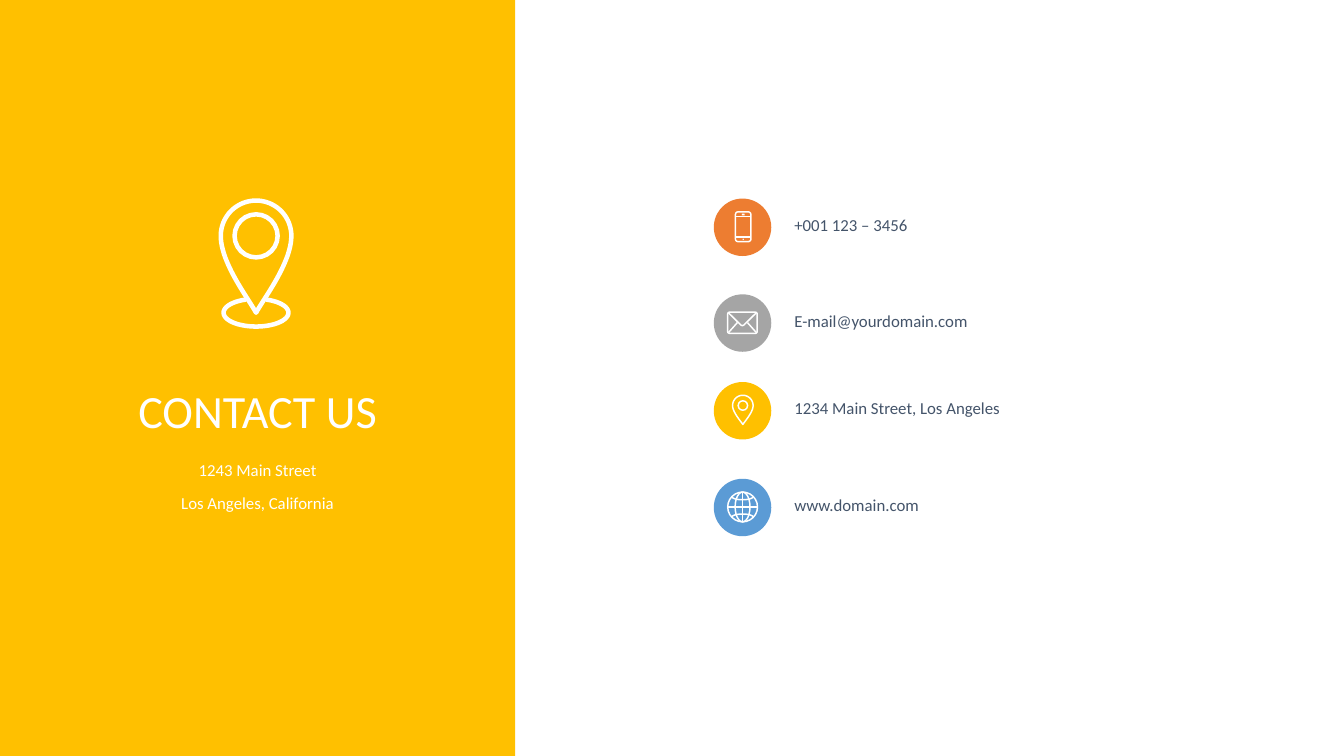
import collections
import math

import pptx
import pptx.dml.color
import pptx.enum.shapes
import pptx.enum.text
import pptx.oxml.ns
import pptx.util
from lxml import etree

WIDTH, HEIGHT = 13.33, 7.5
FONT = "Calibri"
WHITE, AMBER, SLATE = "FFFFFF", "FFC000", "44546A"
THIN = 1.05
SHAPE = pptx.enum.shapes.MSO_SHAPE
ALIGN = pptx.enum.text.PP_ALIGN
ANCHOR = pptx.enum.text.MSO_ANCHOR
FIT = pptx.enum.text.MSO_AUTO_SIZE.SHAPE_TO_FIT_TEXT


class Box(collections.namedtuple("Box", "left top width height")):
    """A region in inches."""

    def point(self, x, y):
        """Return the EMU position at shares x and y of the region."""
        return (pptx.util.Inches(self.left + x * self.width),
                pptx.util.Inches(self.top + y * self.height))

    def share(self, x, y, width, height):
        """Return the region covering the given shares of this one."""
        return Box(self.left + x * self.width, self.top + y * self.height,
                   width * self.width, height * self.height)

    def emu(self):
        """Return the four lengths in EMU."""
        return [pptx.util.Inches(length) for length in self]


def colour(hex_code):
    """Turn a hex string into a colour."""
    return pptx.dml.color.RGBColor.from_string(hex_code)


def add_solid(slide, kind, box, fill):
    """Add a filled preset shape without an outline."""
    solid = slide.shapes.add_shape(kind, *box.emu())
    solid.shadow.inherit = False
    solid.fill.solid()
    solid.fill.fore_color.rgb = colour(fill)
    solid.line.fill.background()
    return solid


def make_outline(figure, weight):
    """Leave only a white outline on a shape."""
    figure.shadow.inherit = False
    figure.fill.background()
    figure.line.color.rgb = colour(WHITE)
    figure.line.width = pptx.util.Pt(weight)
    return figure


def add_outline(slide, kind, box, weight=THIN):
    """Add a white preset outline."""
    return make_outline(slide.shapes.add_shape(kind, *box.emu()), weight)


def add_curve(slide, box, points, weight=THIN, close=False):
    """Draw a white path through points given as shares of the box."""
    start, *others = [box.point(x, y) for x, y in points]
    builder = slide.shapes.build_freeform(*start, scale=1.0)
    builder.add_line_segments(others, close=close)
    make_outline(builder.convert_to_shape(), weight)


def add_line(slide, box, start, end):
    """Draw a thin white line between two shares of the box."""
    line = slide.shapes.add_connector(
        pptx.enum.shapes.MSO_CONNECTOR.STRAIGHT,
        *box.point(*start), *box.point(*end))
    line.line.color.rgb = colour(WHITE)
    line.line.width = pptx.util.Pt(THIN)
    properties = line.element.spPr
    etree.SubElement(properties, pptx.oxml.ns.qn("a:effectLst"))


def write(frame, lines, size, ink, align, anchor, spacing=None, before=0):
    """Write one styled run per paragraph."""
    frame.auto_size = FIT
    frame.vertical_anchor = anchor
    for index, line in enumerate(lines):
        paragraph = frame.add_paragraph() if index else frame.paragraphs[0]
        paragraph.alignment = align
        paragraph.space_before = pptx.util.Pt(before)
        if spacing:
            paragraph.line_spacing = pptx.util.Pt(spacing)
        run = paragraph.add_run()
        run.text = line
        run.font.size = pptx.util.Pt(size)
        run.font.name = FONT
        run.font.color.rgb = colour(ink)


def arc(center, radii, first, last, steps=48):
    """Return points on an ellipse between two angles in degrees."""
    angles = [math.radians(first + (last - first) * i / steps)
              for i in range(steps + 1)]
    return [(center[0] + radii[0] * math.cos(a),
             center[1] + radii[1] * math.sin(a)) for a in angles]


def draw_pin(slide, box, eye, weight=THIN):
    """Draw a map pin whose eye is a share of the box width."""
    head = box.width / 2 / box.height
    side = []
    for i in range(1, 25):
        t = i / 24
        u = 1 - t
        reach = 0.5 * u ** 3 + 1.5 * u * u * t + 0.36 * u * t * t
        drop = 1.05 * u * u * t + 2.4 * u * t * t + t ** 3
        side.append((reach, head + (1 - head) * drop))
    right = [(0.5 + x, y) for x, y in side]
    left = [(0.5 - x, y) for x, y in reversed(side[:-1])]
    add_curve(slide, box, arc((0.5, head), (0.5, head), 180, 360) + right + left,
              weight, close=True)
    eye_height = eye * 2 * head
    add_outline(slide, SHAPE.OVAL, box.share(
        0.5 - eye / 2, head - eye_height / 2, eye, eye_height), weight)


def draw_place(slide, box):
    """Draw the small map pin."""
    draw_pin(slide, box.share(0.18, 0.02, 0.66, 0.94), 0.46)


def draw_phone(slide, box):
    """Draw a mobile phone."""
    body = box.share(0.27, 0.02, 0.5, 0.96)
    add_outline(slide, SHAPE.ROUNDED_RECTANGLE, body).adjustments[0] = 0.17
    for edge in (0.16, 0.85):
        add_line(slide, body, (0, edge), (1, edge))
    add_solid(slide, SHAPE.ROUNDED_RECTANGLE, body.share(0.41, 0.06, 0.18, 0.06), WHITE)
    add_solid(slide, SHAPE.OVAL, body.share(0.46, 0.9, 0.08, 0.05), WHITE)


def draw_envelope(slide, box):
    """Draw a closed envelope."""
    paper = box.share(0.02, 0.17, 0.95, 0.68)
    add_outline(slide, SHAPE.ROUNDED_RECTANGLE, paper).adjustments[0] = 0.08
    add_curve(slide, paper, [(0.03, 0.03), (0.45, 0.61), (0.5, 0.64),
                             (0.55, 0.61), (0.97, 0.03)])
    for corner, flap in ((0.03, 0.33), (0.97, 0.67)):
        add_line(slide, paper, (corner, 0.96), (flap, 0.49))


def draw_globe(slide, box):
    """Draw a globe with its meridians and parallels."""
    add_outline(slide, SHAPE.OVAL, box.share(0.02, 0.02, 0.96, 0.96))
    add_outline(slide, SHAPE.OVAL, box.share(0.26, 0.02, 0.48, 0.96))
    add_line(slide, box, (0.5, 0.02), (0.5, 0.98))
    add_line(slide, box, (0.02, 0.5), (0.98, 0.5))
    add_curve(slide, box, arc((0.5, 0.17), (0.34, 0.1), 180, 0))
    add_curve(slide, box, arc((0.5, 0.83), (0.34, 0.1), 180, 360))


def draw_address_panel(slide, box):
    """Fill the left panel with the pin, title and street address."""
    title = slide.shapes.title
    panel = add_solid(slide, SHAPE.RECTANGLE, box, AMBER)
    title.element.addprevious(panel.element)
    title.left, title.top, title.width, title.height = box.share(
        0.18, 0.48, 0.64, 0.1).emu()
    title.text_frame.word_wrap = False
    write(title.text_frame, ["CONTACT US"], 33, WHITE, ALIGN.CENTER, ANCHOR.TOP, 50)

    marker = Box(box.left + 2.19, box.top + 1.99, 0.7, 1.25)
    draw_pin(slide, marker.share(0, 0, 1, 0.89), 0.61, 3.24)
    add_curve(slide, marker, arc((0.5, 0.89), (0.46, 0.11), -72, 252), 3.24)

    address = slide.shapes.add_textbox(*box.share(0.27, 0.59, 0.46, 0.09).emu())
    frame = address.text_frame
    frame.word_wrap = True
    frame.margin_left = frame.margin_right = pptx.util.Inches(0.12)
    frame.margin_top = frame.margin_bottom = pptx.util.Inches(0.06)
    write(frame, ["1243 Main Street", "Los Angeles, California"], 12, WHITE,
          ALIGN.CENTER, ANCHOR.TOP, 20.2, 2.9)


def draw_contact(slide, box, fill, draw_icon, detail):
    """Place a badge with its icon and the contact detail beside it."""
    badge = Box(box.left, box.top, box.height, box.height)
    add_solid(slide, SHAPE.OVAL, badge, fill)
    draw_icon(slide, badge.share(0.23, 0.22, 0.54, 0.54))
    label = Box(box.left + 0.7, box.top + 0.11, box.width - 0.7, 0.3)
    frame = slide.shapes.add_textbox(*label.emu()).text_frame
    frame.word_wrap = False
    write(frame, [detail], 12, SLATE, ALIGN.LEFT, ANCHOR.MIDDLE)


def main():
    """Build the contact slide."""
    deck = pptx.Presentation()
    deck.slide_width = pptx.util.Inches(WIDTH)
    deck.slide_height = pptx.util.Inches(HEIGHT)
    slide = deck.slides.add_slide(deck.slide_layouts.get_by_name("Title Only"))
    draw_address_panel(slide, Box(0, 0, 5.11, HEIGHT))
    for top, label_width, fill, draw_icon, detail in [
            (1.97, 1.5, "ED7D31", draw_phone, "+001 123 – 3456"),
            (2.92, 2.37, "A5A5A5", draw_envelope, "E-mail@yourdomain.com"),
            (3.79, 2.68, AMBER, draw_place, "1234 Main Street, Los Angeles"),
            (4.75, 1.75, "5B9BD5", draw_globe, "www.domain.com")]:
        row = Box(7.08, top, 0.7 + label_width, 0.57)
        draw_contact(slide, row, fill, draw_icon, detail)
    deck.save("out.pptx")


if __name__ == "__main__":
    main()
